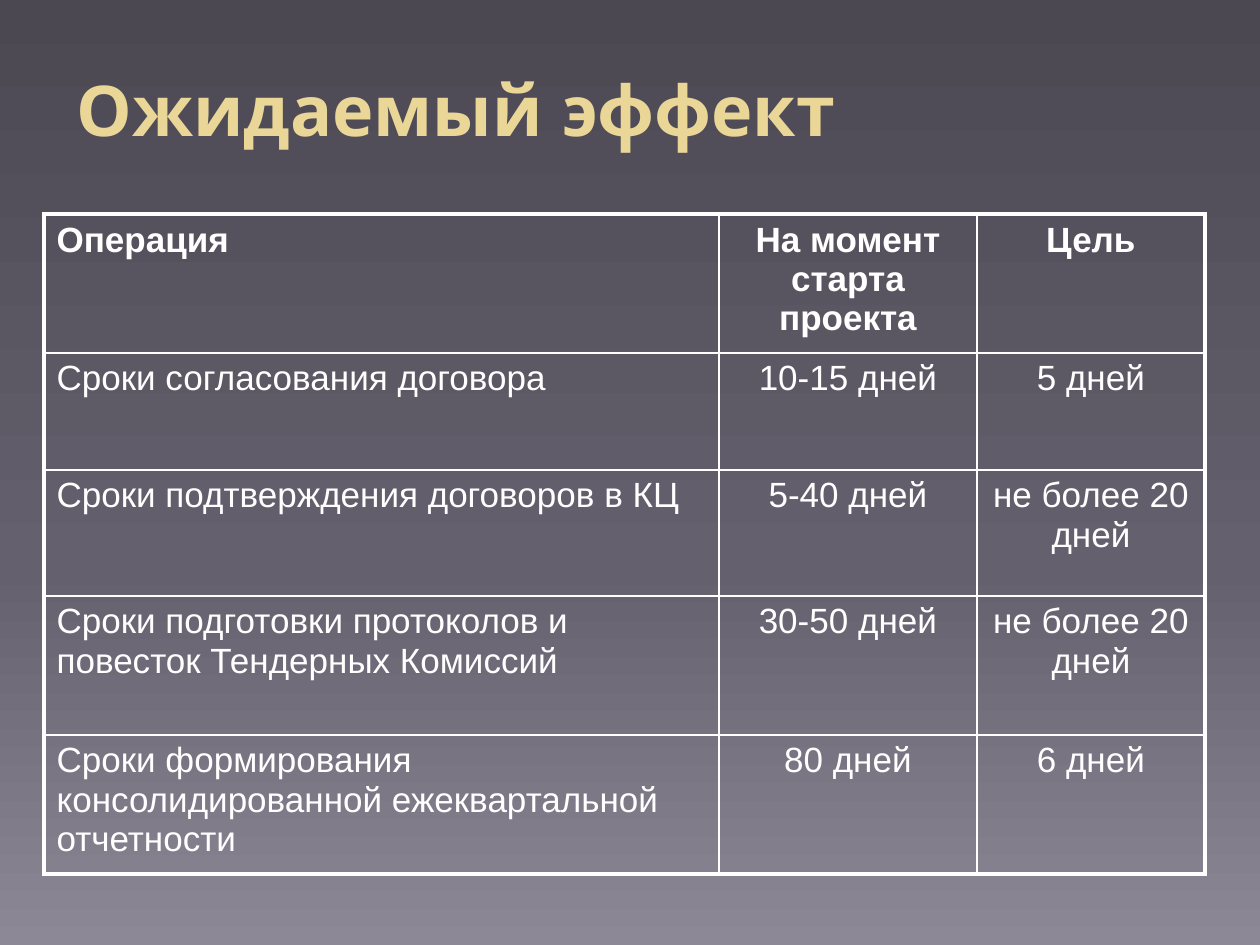
"""Build the slide with the table of expected effects."""
from copy import deepcopy
from lxml import etree
from pptx import Presentation, util as u
from pptx.dml.color import RGBColor
from pptx.enum import text
from pptx.oxml import ns

HUES = {"dark": "4B4852", "mid": "64606D", "light": "8C8896",
        "gold": "EAD696", "deep": "E7D081", "white": "FFFFFF"}
FONT = {"name": "Arial", "size": u.Pt(20)}
HEAD = {"name": "Quicksand", "size": u.Pt(40), "bold": True}
COLS = [675, 258, 228]
TALL = [139, 117, 126, 139, 139]
ROWS = [
    ("Операция", "На момент старта проекта", "Цель"),
    ("Сроки согласования договора", "10-15 дней", "5 дней"),
    ("Сроки подтверждения договоров в КЦ", "5-40 дней", "не более 20 дней"),
    ("Сроки подготовки протоколов и повесток Тендерных Комиссий",
     "30-50 дней", "не более 20 дней"),
    ("Сроки формирования консолидированной ежеквартальной отчетности",
     "80 дней", "6 дней"),
]


def px(num):
    return u.Emu(round(num * 914400 / 126))


def blend(fill, root, angle, stops):
    fill.gradient()
    fill.gradient_angle = angle
    group = next(root.iter(ns.qn("a:gsLst")))
    group.append(deepcopy(group[-1]))
    for stop, (place, hue) in zip(fill.gradient_stops, stops):
        stop.position = place
        stop.color.rgb = RGBColor.from_string(HUES[hue])


deck = Presentation()
deck.slide_width, deck.slide_height = px(1260), px(945)
slide = deck.slides.add_slide(deck.slide_layouts[5])
blend(slide.background.fill, slide.element, 270,
      [(0, "dark"), (0.6, "mid"), (1, "light")])

title = slide.shapes.title
title.left, title.top, title.width, title.height = map(px, (64, 76, 912, 80))
frame = title.text_frame
frame.text = "Ожидаемый эффект"
frame.vertical_anchor = text.MSO_ANCHOR.TOP
frame.auto_size = text.MSO_AUTO_SIZE.SHAPE_TO_FIT_TEXT
para = frame.paragraphs[0]
para.alignment = text.PP_ALIGN.LEFT
para.line_spacing = 0.8
run = para.runs[0]
for key, value in HEAD.items():
    setattr(run.font, key, value)
blend(run.font.fill, title.element, 280,
      [(0, "gold"), (0.73, "gold"), (1, "deep")])

table = slide.shapes.add_table(len(ROWS), len(COLS), px(44), px(214),
                               px(sum(COLS)), px(sum(TALL))).table
table.first_row = table.horz_banding = False
for col, wide in zip(table.columns, COLS):
    col.width = px(wide)
for row, tall in zip(table.rows, TALL):
    row.height = px(tall)

for y, row in enumerate(ROWS):
    for x, words in enumerate(row):
        cell = table.cell(y, x)
        cell.text = words
        para = cell.text_frame.paragraphs[0]
        para.alignment = text.PP_ALIGN.CENTER if x else text.PP_ALIGN.LEFT
        para.space_after = u.Pt(5)
        for key, value in FONT.items():
            setattr(para.font, key, value)
        para.font.bold = y == 0
        para.font.color.rgb = RGBColor.from_string(HUES["white"])
        props = cell._tc.get_or_add_tcPr()
        outer = {"L": x == 0, "R": x == len(COLS) - 1,
                 "T": y == 0, "B": y == len(ROWS) - 1}
        for side, edge in outer.items():
            line = etree.SubElement(props, ns.qn("a:ln" + side),
                                    w=str(u.Pt(2.25 if edge else 1)))
            solid = etree.SubElement(line, ns.qn("a:solidFill"))
            etree.SubElement(solid, ns.qn("a:srgbClr"), val=HUES["white"])
        cell.fill.background()

deck.save("out.pptx")
